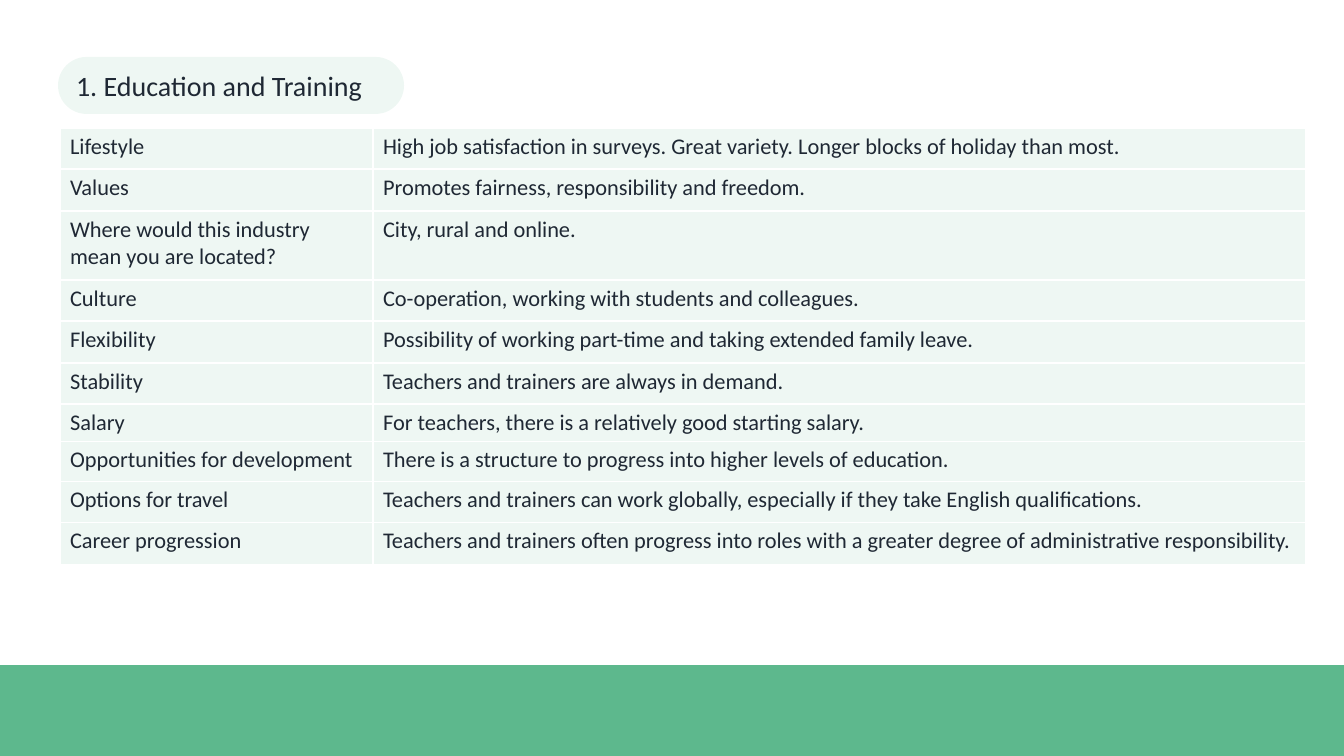
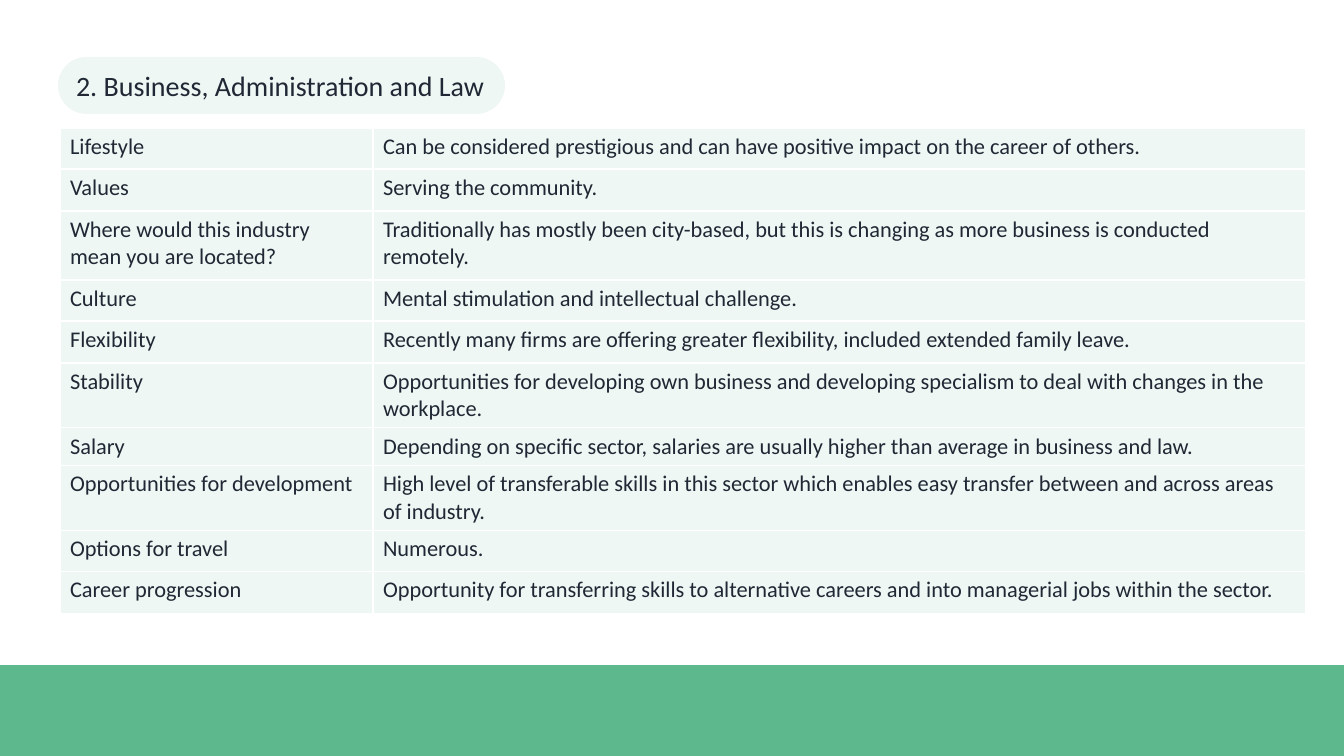
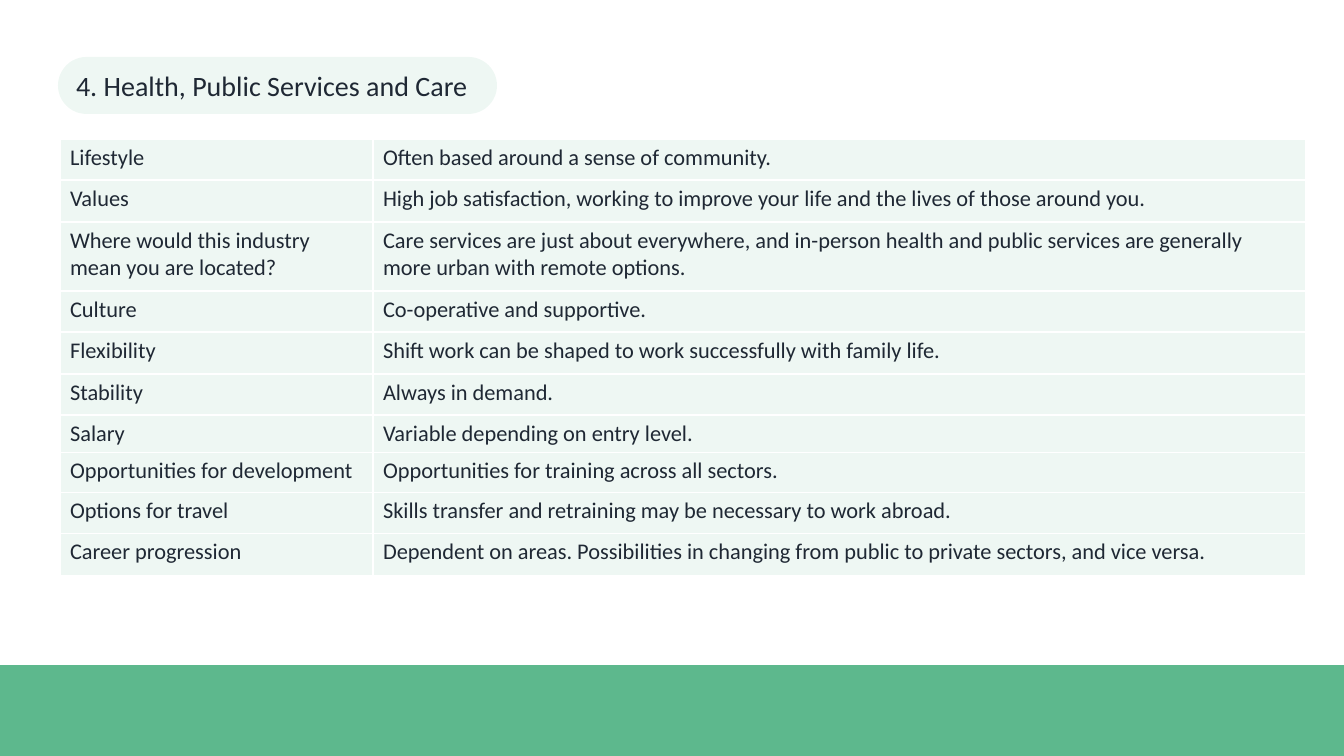
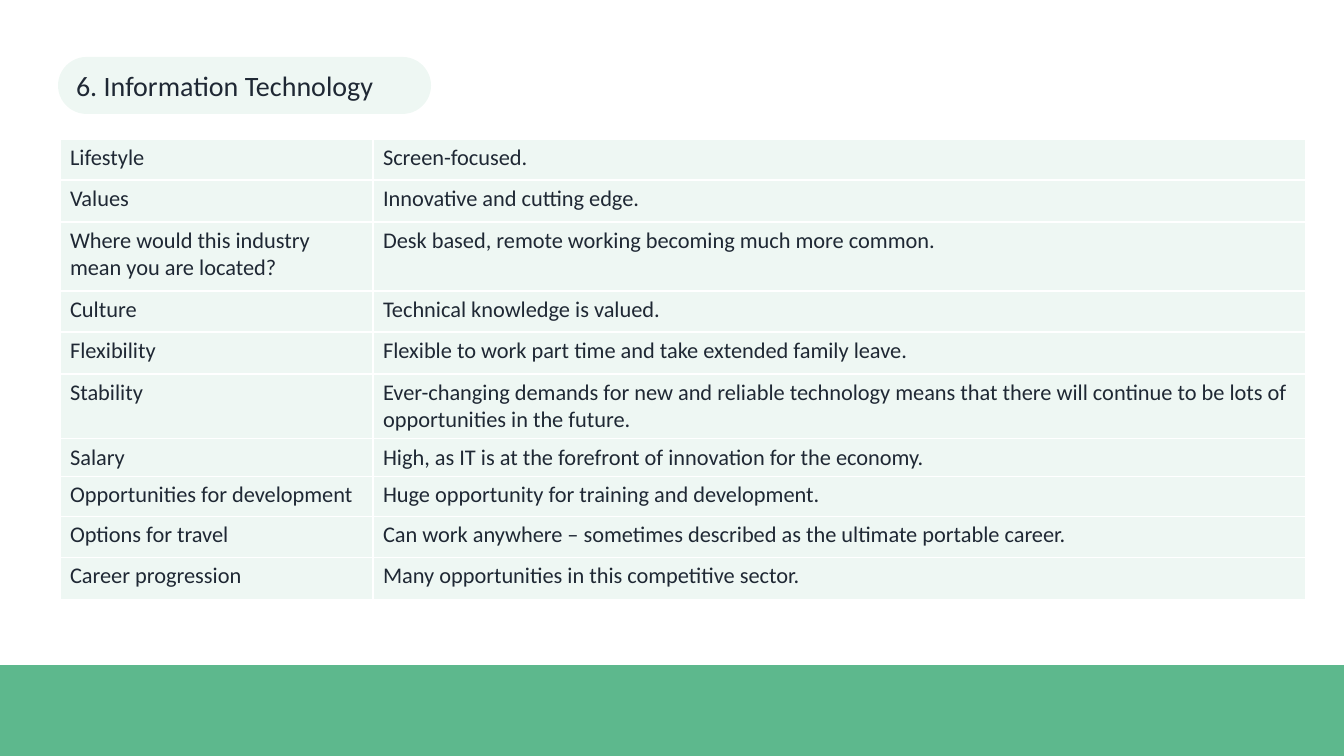
import lxml.etree
import pptx
import pptx.dml.color
import pptx.enum.shapes
import pptx.enum.text
import pptx.oxml.ns
import pptx.util

COLOURS = {"green": "5DB88D", "ink": "1F2834", "white": "FFFFFF"}
FONT = "Calibri"
TINT_PERCENT = 10
PLAIN_TABLE = "{2D5ABB26-0587-4C30-8999-92F81FD0307C}"
PAGE_WIDTH, PAGE_HEIGHT = 1344, 756
BAND_BOX = (0, 665, PAGE_WIDTH, 91)
PILL_LEFT, PILL_TOP, PILL_HEIGHT, PILL_INSET = 58, 57, 57, 18
TABLE_LEFT = 60
COLUMN_WIDTHS = (313, 933)
ROW_HEIGHTS = (41, 42, 69, 41, 42, 41, 37, 40, 41, 42)

TOPICS = (
    "Lifestyle",
    "Values",
    "Where would this industry mean you are located?",
    "Culture",
    "Flexibility",
    "Stability",
    "Salary",
    "Opportunities for development",
    "Options for travel",
    "Career progression",
)

SECTORS = (
    ("1. Education and Training", 346, 128, (
        "High job satisfaction in surveys. Great variety. Longer blocks of holiday than most.",
        "Promotes fairness, responsibility and freedom.",
        "City, rural and online.",
        "Co-operation, working with students and colleagues.",
        "Possibility of working part-time and taking extended family leave.",
        "Teachers and trainers are always in demand.",
        "For teachers, there is a relatively good starting salary.",
        "There is a structure to progress into higher levels of education.",
        "Teachers and trainers can work globally, especially if they take English qualifications.",
        "Teachers and trainers often progress into roles with a greater degree of administrative responsibility.",
    )),
    ("2. Business, Administration and Law", 447, 128, (
        "Can be considered prestigious and can have positive impact on the career of others.",
        "Serving the community.",
        "Traditionally has mostly been city-based, but this is changing as more business is conducted remotely.",
        "Mental stimulation and intellectual challenge.",
        "Recently many firms are offering greater flexibility, included extended family leave.",
        "Opportunities for developing own business and developing specialism to deal with changes in the workplace.",
        "Depending on specific sector, salaries are usually higher than average in business and law.",
        "High level of transferable skills in this sector which enables easy transfer between and across areas of industry.",
        "Numerous.",
        "Opportunity for transferring skills to alternative careers and into managerial jobs within the sector.",
    )),
    ("4. Health, Public Services and Care", 439, 139, (
        "Often based around a sense of community.",
        "High job satisfaction, working to improve your life and the lives of those around you.",
        "Care services are just about everywhere, and in-person health and public services are generally more urban with remote options.",
        "Co-operative and supportive.",
        "Shift work can be shaped to work successfully with family life.",
        "Always in demand.",
        "Variable depending on entry level.",
        "Opportunities for training across all sectors.",
        "Skills transfer and retraining may be necessary to work abroad.",
        "Dependent on areas. Possibilities in changing from public to private sectors, and vice versa.",
    )),
    ("6. Information Technology", 373, 139, (
        "Screen-focused.",
        "Innovative and cutting edge.",
        "Desk based, remote working becoming much more common.",
        "Technical knowledge is valued.",
        "Flexible to work part time and take extended family leave.",
        "Ever-changing demands for new and reliable technology means that there will continue to be lots of opportunities in the future.",
        "High, as IT is at the forefront of innovation for the economy.",
        "Huge opportunity for training and development.",
        "Can work anywhere – sometimes described as the ultimate portable career.",
        "Many opportunities in this competitive sector.",
    )),
)


def px(length):
    return pptx.util.Emu(round(length * 914400 / 100.8))


def colour(name):
    return pptx.dml.color.RGBColor.from_string(COLOURS[name])


def paint(fill, name):
    fill.solid()
    fill.fore_color.rgb = colour(name)


def make_translucent(properties):
    for tone in properties.iter(pptx.oxml.ns.qn("a:srgbClr")):
        alpha = lxml.etree.SubElement(tone, pptx.oxml.ns.qn("a:alpha"))
        alpha.set("val", str(TINT_PERCENT * 1000))


def write(para, text, size):
    span = para.add_run()
    span.text = text
    span.font.name = FONT
    span.font.size = pptx.util.Pt(size)
    span.font.color.rgb = colour("ink")


def add_block(page, kind, box):
    block = page.shapes.add_shape(kind, *map(px, box))
    block.shadow.inherit = False
    paint(block.fill, "green")
    block.line.fill.background()
    return block


def add_band(page):
    band = add_block(page, pptx.enum.shapes.MSO_SHAPE.RECTANGLE, BAND_BOX)
    page.slide_layout.shapes.element.insert(2, band.element)


def add_heading(page, box, text):
    pill = add_block(page, pptx.enum.shapes.MSO_SHAPE.ROUNDED_RECTANGLE, box)
    pill.adjustments[0] = 0.5
    make_translucent(pill.element.spPr)
    title = page.shapes.title
    pill.element.addnext(title.element)
    title.left, title.top, title.width, title.height = map(px, box)
    frame = title.text_frame
    frame.word_wrap = True
    frame.auto_size = pptx.enum.text.MSO_AUTO_SIZE.NONE
    frame.vertical_anchor = pptx.enum.text.MSO_ANCHOR.MIDDLE
    frame.margin_left, frame.margin_right = px(PILL_INSET), 0
    para = frame.paragraphs[0]
    para.alignment = pptx.enum.text.PP_ALIGN.LEFT
    write(para, text, 20)


def add_borders(properties):
    for position, side in enumerate(("lnL", "lnR", "lnT", "lnB")):
        line = lxml.etree.Element(pptx.oxml.ns.qn("a:" + side), w=str(pptx.util.Pt(1)))
        fill = lxml.etree.SubElement(line, pptx.oxml.ns.qn("a:solidFill"))
        lxml.etree.SubElement(fill, pptx.oxml.ns.qn("a:srgbClr"), val=COLOURS["white"])
        properties.insert(position, line)


def add_profile(page, box, answers):
    holder = page.shapes.add_table(len(TOPICS), len(COLUMN_WIDTHS), *map(px, box))
    table = holder.table
    table.first_row = table.horz_banding = False
    for style in holder.element.iter(pptx.oxml.ns.qn("a:tableStyleId")):
        style.text = PLAIN_TABLE
    for column, width in zip(table.columns, COLUMN_WIDTHS):
        column.width = px(width)
    for row, height, texts in zip(table.rows, ROW_HEIGHTS, zip(TOPICS, answers)):
        row.height = px(height)
        for cell, text in zip(row.cells, texts):
            paint(cell.fill, "green")
            write(cell.text_frame.paragraphs[0], text, 16)
    for properties in holder.element.iter(pptx.oxml.ns.qn("a:tcPr")):
        make_translucent(properties)
        add_borders(properties)


def main():
    deck = pptx.Presentation()
    deck.slide_width, deck.slide_height = px(PAGE_WIDTH), px(PAGE_HEIGHT)
    layout = deck.slide_layouts.get_by_name("Title Only")
    for number, (heading, pill_width, table_top, answers) in enumerate(SECTORS):
        page = deck.slides.add_slide(layout)
        if number == 0:
            add_band(page)
        add_heading(page, (PILL_LEFT, PILL_TOP, pill_width, PILL_HEIGHT), heading)
        table_box = (TABLE_LEFT, table_top, sum(COLUMN_WIDTHS), sum(ROW_HEIGHTS))
        add_profile(page, table_box, answers)
    deck.save("out.pptx")


if __name__ == "__main__":
    main()
